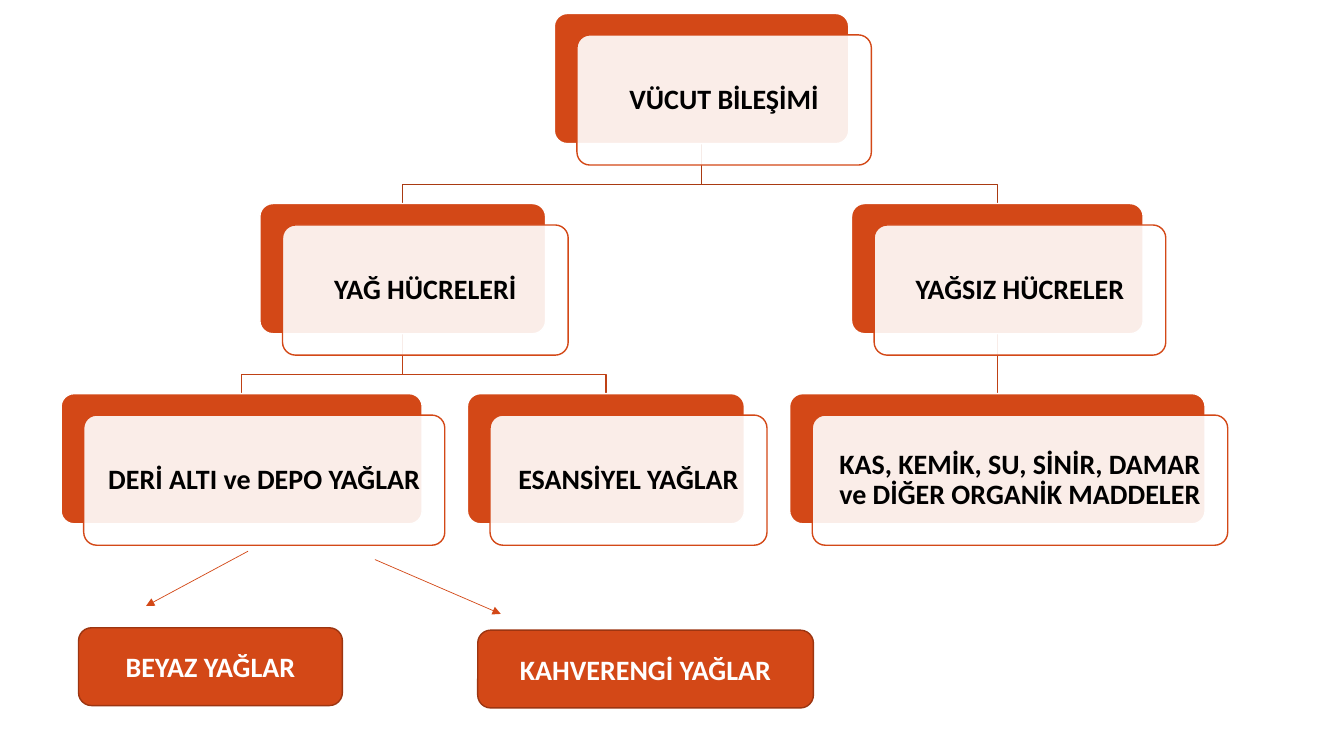
from dataclasses import dataclass

from lxml.etree import SubElement
from pptx import Presentation
from pptx.dml.color import RGBColor
from pptx.enum.shapes import MSO_CONNECTOR as Connector, MSO_SHAPE as Shape
from pptx.enum.text import MSO_ANCHOR as Anchor, PP_ALIGN as Align
from pptx.oxml.ns import qn
from pptx.util import Cm, Pt

# Content: (label, width in cm, children)
BODY_TREE = ("VÜCUT BİLEŞİMİ", 7.42, [
    ("YAĞ HÜCRELERİ", 7.2, [
        ("DERİ ALTI ve DEPO YAĞLAR", 9.1, []),
        ("ESANSİYEL YAĞLAR", 6.98, []),
    ]),
    ("YAĞSIZ HÜCRELER", 7.35, [
        ("KAS, KEMİK, SU, SİNİR, DAMAR ve DİĞER ORGANİK MADDELER", 10.47, []),
    ]),
])
# label, (left, top, width), arrow start, arrow end, in cm
FAT_TYPES = [
    ("BEYAZ YAĞLAR", (1.98, 15.82, 6.65), (6.25, 13.89), (3.68, 15.27)),
    ("KAHVERENGİ YAĞLAR", (12.04, 15.88, 8.46), (9.45, 14.1), (12.62, 15.47)),
]


@dataclass(frozen=True)
class Theme:
    font: str = "Calibri"
    size: int = 20
    accent: str = "D34817"
    accent_dark: str = "9C3511"
    branches: tuple = ("A93A12", "BF4115")
    white: str = "FFFFFF"
    black: str = "000000"
    card_opacity: int = 90


THEME = Theme()

# Layout in cm
TREE_LEFT, TREE_TOP = 1.54, 0.34
LEVEL_STEP, CARD_HEIGHT, LEAF_GAP = 4.79, 3.28, 1.14
CARD_SHIFT_X, CARD_SHIFT_Y = 0.57, 0.54
BEND_ABOVE_CHILD = 0.48
CARD_INSET = 0.2
FAT_HEIGHT = 1.96


def color(value):
    return RGBColor.from_string(value)


def place_tree(node, level, leaf_left):
    """Centre each parent over its children; return the placed node and the next leaf's left."""
    label, width, children = node
    placed = []
    next_left = leaf_left
    for child in children:
        branch, next_left = place_tree(child, level + 1, next_left)
        placed.append(branch)
    if placed:
        right = placed[-1]["left"] + placed[-1]["width"]
        left = (placed[0]["left"] + right - width) / 2
    else:
        left, next_left = leaf_left, leaf_left + width + LEAF_GAP
    return {"label": label, "left": left, "width": width, "level": level,
            "top": TREE_TOP + level * LEVEL_STEP, "children": placed}, next_left


def walk(node):
    yield node
    for child in node["children"]:
        yield from walk(child)


def add_line(slide, start, end, line_color, weight):
    line = slide.shapes.add_connector(
        Connector.STRAIGHT, *(Cm(value) for value in (*start, *end)))
    line.line.color.rgb = color(line_color)
    line.line.width = Pt(weight)
    SubElement(line._element.spPr, qn("a:effectLst"))
    return line


def add_branch(slide, parent, child):
    parent_x, child_x = (n["left"] + n["width"] / 2 for n in (parent, child))
    start_y, end_y = parent["top"] + CARD_HEIGHT, child["top"]
    line_color = THEME.branches[parent["level"]]
    if len(parent["children"]) == 1:
        add_line(slide, (parent_x, start_y), (child_x, end_y), line_color, 1)
        return
    bend_y = end_y - BEND_ABOVE_CHILD
    corners = [(parent_x, bend_y), (child_x, bend_y), (child_x, end_y)]
    builder = slide.shapes.build_freeform(Cm(parent_x), Cm(start_y))
    builder.add_line_segments([(Cm(x), Cm(y)) for x, y in corners], close=False)
    branch = builder.convert_to_shape()
    branch.shadow.inherit = False
    branch.fill.background()
    branch.line.color.rgb = color(line_color)
    branch.line.width = Pt(1)


def add_round_box(slide, box, fill, outline):
    panel = slide.shapes.add_shape(
        Shape.ROUNDED_RECTANGLE, *(Cm(value) for value in box))
    panel.shadow.inherit = False
    panel.fill.solid()
    panel.fill.fore_color.rgb = color(fill)
    panel.line.color.rgb = color(outline)
    panel.line.width = Pt(1)
    return panel


def write_label(panel, label, text_color):
    frame = panel.text_frame
    frame.word_wrap = True
    frame.vertical_anchor = Anchor.MIDDLE
    paragraph = frame.paragraphs[0]
    paragraph.alignment = Align.CENTER
    run = paragraph.add_run()
    run.text = label
    run.font.name = THEME.font
    run.font.size = Pt(THEME.size)
    run.font.bold = True
    run.font.color.rgb = color(text_color)
    return frame


def add_card(slide, node):
    """Solid back plate with a translucent labelled card shifted over it."""
    left, top, width = node["left"], node["top"], node["width"]
    back = add_round_box(slide, (left, top, width, CARD_HEIGHT), THEME.accent, THEME.white)
    card = add_round_box(
        slide, (left + CARD_SHIFT_X, top + CARD_SHIFT_Y, width, CARD_HEIGHT),
        THEME.white, THEME.accent)
    for plate in (back, card):
        plate.adjustments[0] = 0.1
    fill_color = card._element.spPr.find(qn("a:solidFill")).find(qn("a:srgbClr"))
    SubElement(fill_color, qn("a:alpha"), val=str(THEME.card_opacity * 1000))
    frame = write_label(card, node["label"], THEME.black)
    frame.margin_left = frame.margin_right = Cm(CARD_INSET)
    frame.margin_top = frame.margin_bottom = Cm(CARD_INSET)
    frame.paragraphs[0].line_spacing = 0.9
    frame.paragraphs[0].space_after = Pt(7)


def add_fat_type(slide, label, place, arrow_start, arrow_end):
    arrow = add_line(slide, arrow_start, arrow_end, THEME.accent, 0.5)
    SubElement(arrow.line._get_or_add_ln(), qn("a:tailEnd"), type="triangle")
    panel = add_round_box(slide, (*place, FAT_HEIGHT), THEME.accent, THEME.accent_dark)
    write_label(panel, label, THEME.white)


def main():
    deck = Presentation()
    deck.slide_width, deck.slide_height = Cm(33.87), Cm(19.05)
    slide = deck.slides.add_slide(deck.slide_layouts[6])
    root, _ = place_tree(BODY_TREE, 0, TREE_LEFT)
    nodes = list(walk(root))
    for parent in nodes:
        for child in parent["children"]:
            add_branch(slide, parent, child)
    for node in nodes:
        add_card(slide, node)
    for fat_type in FAT_TYPES:
        add_fat_type(slide, *fat_type)
    deck.save("out.pptx")


if __name__ == "__main__":
    main()
